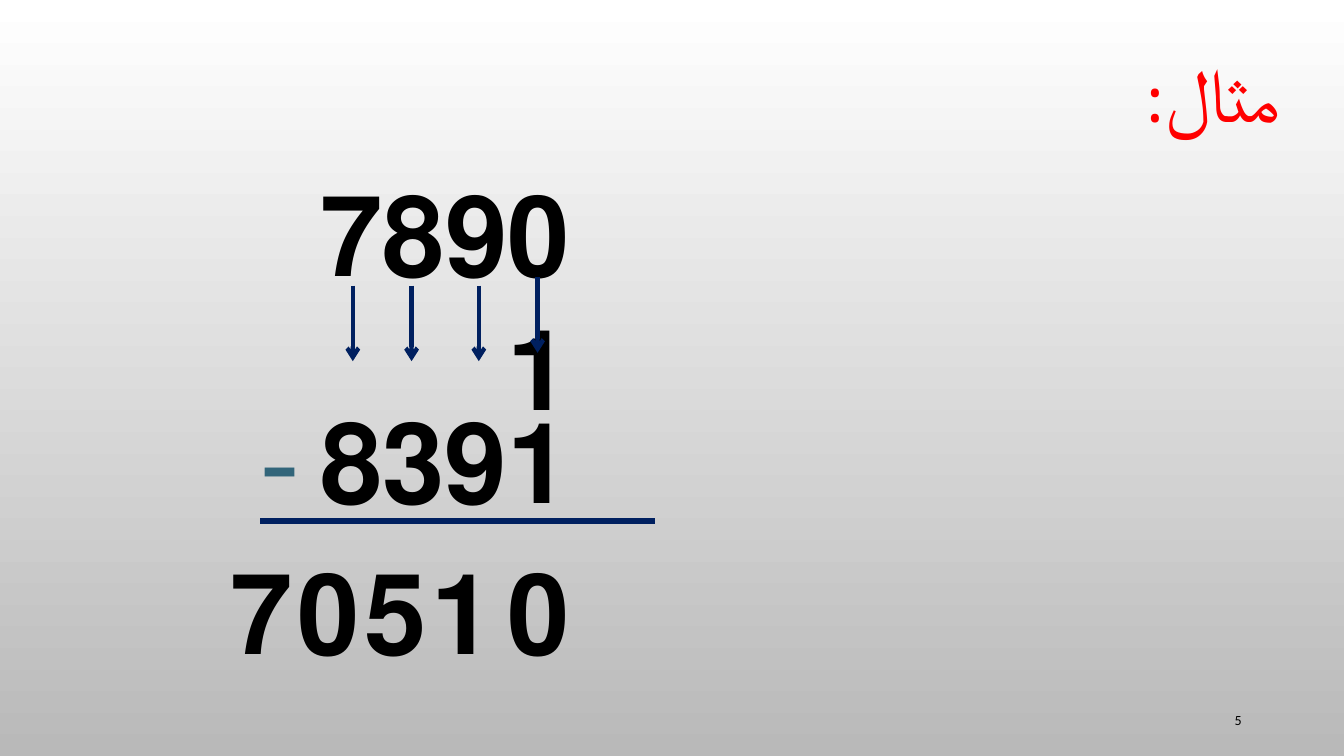
from pptx import Presentation
from pptx import util as u
from pptx.dml.color import RGBColor
from pptx.enum import shapes, text
from pptx.oxml.ns import qn
from lxml import etree

PX = 9525  # EMU in one px: 96 px to the inch

WHITE = RGBColor(0xFF, 0xFF, 0xFF)
GREY = RGBColor(0xB9, 0xB9, 0xB9)
RED = RGBColor(0xFF, 0x00, 0x00)
BLACK = RGBColor(0x00, 0x00, 0x00)
NAVY = RGBColor(0x00, 0x20, 0x60)
TEAL = RGBColor(0x32, 0x65, 0x7A)


def px(*lengths):
    return [u.Emu(n * PX) for n in lengths]


def set_background(s):
    fill = s.background.fill
    fill.gradient()
    fill.gradient_angle = 270
    for stop, color, position in zip(fill.gradient_stops, (WHITE, GREY), (0, 1)):
        stop.color.rgb = color
        stop.position = position


def write(sp, box, words, size, color, bold=False, font="Cambria",
          script_font=None, anchor=text.MSO_ANCHOR.TOP):
    """Place a shape and fill it with one right-to-left paragraph."""
    sp.left, sp.top, sp.width, sp.height = px(*box)
    tf = sp.text_frame
    tf.word_wrap = True
    tf.auto_size = text.MSO_AUTO_SIZE.NONE
    tf.vertical_anchor = anchor
    p = tf.paragraphs[0]
    p.text = words
    p.alignment = text.PP_ALIGN.RIGHT
    p._p.get_or_add_pPr().set("rtl", "1")
    p.font.name, p.font.size, p.font.bold = font, u.Pt(size), bold
    p.font.color.rgb = color
    if script_font:
        r_pr = p.runs[0]._r.get_or_add_rPr()
        etree.SubElement(r_pr, qn("a:cs"), typeface=script_font)


def add_text(s, box, *args, **kwargs):
    write(s.shapes.add_textbox(*px(*box)), box, *args, **kwargs)


def add_line(s, x1, y1, x2, y2, width, arrow=False):
    line = s.shapes.add_connector(shapes.MSO_CONNECTOR.STRAIGHT, *px(x1, y1, x2, y2))
    line.line.color.rgb = NAVY
    line.line.width = u.Pt(width)
    if arrow:
        etree.SubElement(line.line._get_or_add_ln(), qn("a:tailEnd"), type="arrow")
    etree.SubElement(line._element.spPr, qn("a:effectLst"))


def main():
    prs = Presentation()
    prs.slide_width, prs.slide_height = px(1280, 720)
    s = prs.slides.add_slide(prs.slide_layouts[5])
    set_background(s)

    # Title
    write(s.shapes.title, (989, 40, 240, 136), "مثال:", 54, RED,
          script_font="Cambria")

    # Numbers of the subtraction
    add_text(s, (240, 152, 312, 112), "78901", 80, BLACK, bold=True)
    add_text(s, (280, 368, 272, 136), "8391", 80, BLACK, bold=True)
    add_text(s, (224, 360, 72, 136), "-", 88, TEAL)
    add_line(s, 248, 496, 624, 496, 4.5)

    # Arrows under the digits
    for x, y in ((512, 264), (456, 272), (392, 272), (336, 272)):
        add_line(s, x, y, x, y + 72, 3, arrow=True)

    # Digits of the result, from the units up
    for x, digit in zip((456, 384, 320, 256, 192), "01507"):
        add_text(s, (x, 512, 96, 136), digit, 80, BLACK, bold=True)

    # Slide number
    add_text(s, (904, 667, 288, 38), "5", 10, BLACK, font="Calibri",
             script_font="Calibri", anchor=text.MSO_ANCHOR.MIDDLE)

    prs.save("out.pptx")


if __name__ == "__main__":
    main()
